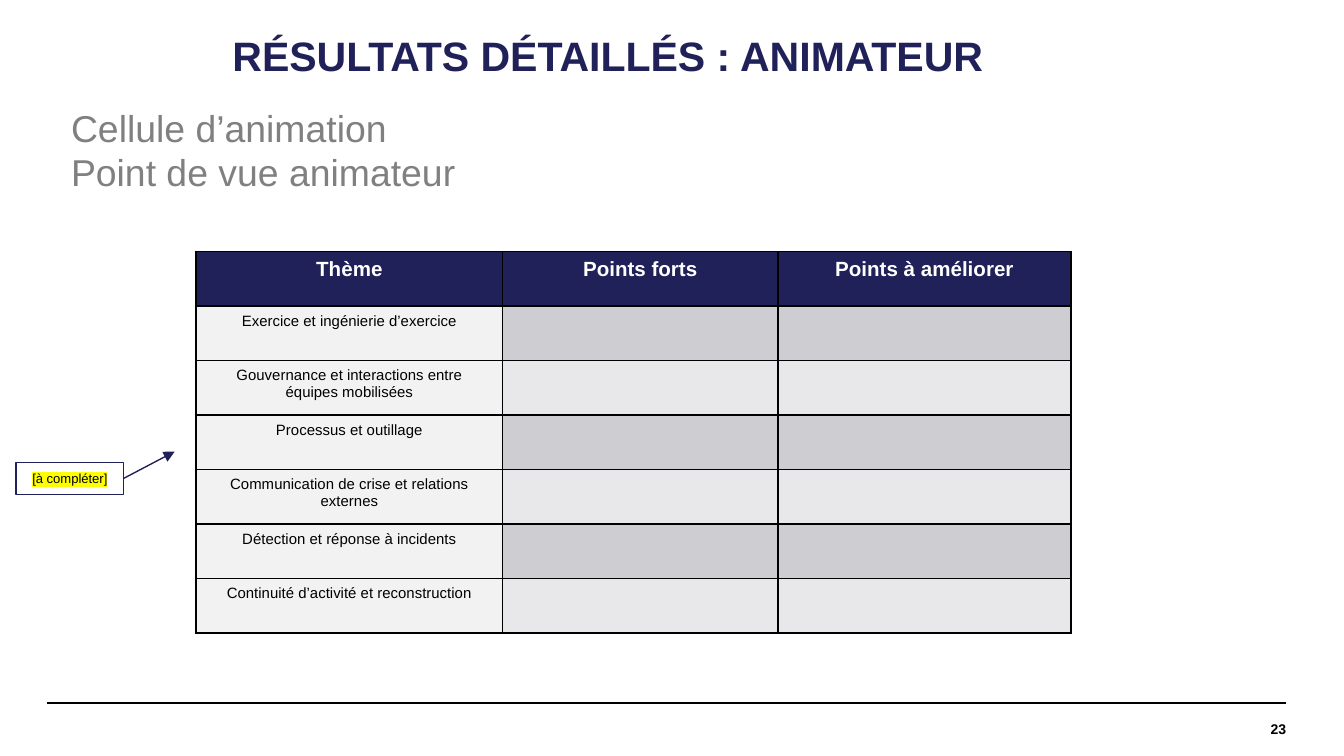
"""Build the detailed results slide for the exercise facilitator."""
from dataclasses import dataclass
from typing import Any, Optional

import lxml.etree
import pptx
import pptx.dml.color
import pptx.enum.shapes
import pptx.enum.text
import pptx.oxml.ns
import pptx.util

Inches = pptx.util.Inches
qn = pptx.oxml.ns.qn
ALIGN = pptx.enum.text.PP_ALIGN
ANCHOR = pptx.enum.text.MSO_ANCHOR


@dataclass(frozen=True)
class Theme:
    font: str = "Arial"
    navy: str = "21215A"
    black: str = "000000"
    white: str = "FFFFFF"
    grey: str = "808080"
    theme_fill: str = "F2F2F2"
    bands: tuple[str, str] = ("CDCDD2", "E8E8EA")
    highlight: str = "FFFF00"
    title_size: float = 22
    subtitle_size: float = 20
    header_size: float = 11
    body_size: float = 8
    number_size: float = 7.5
    note_size: float = 7
    thin_line: float = 0.75
    footer_line: float = 0.8
    border: float = 1


@dataclass(frozen=True)
class Style:
    size: float
    color: str
    bold: bool = False
    align: Optional[Any] = None


@dataclass(frozen=True)
class Label:
    text: str
    left: float
    top: float
    width: float
    height: float
    style: Style
    anchor: Any = ANCHOR.TOP
    padded: bool = True


THEME = Theme()
SLIDE_WIDTH = 10
SLIDE_HEIGHT = SLIDE_WIDTH * 9 / 16
TITLE = Label("RÉSULTATS DÉTAILLÉS : ANIMATEUR", 1.61, 0.1, 8.47, 0.67,
              Style(THEME.title_size, THEME.navy, True), ANCHOR.MIDDLE)
SUBTITLE = Label("Cellule d’animation\nPoint de vue animateur", 0.43, 0.73, 6.28, 0.77,
                 Style(THEME.subtitle_size, THEME.grey))
PAGE_NUMBER = Label("23", 8.09, 5.23, 1.48, 0.39,
                    Style(THEME.number_size, THEME.black, True, ALIGN.RIGHT), ANCHOR.MIDDLE, False)
HEADER_STYLE = Style(THEME.header_size, THEME.white, True, ALIGN.CENTER)
BODY_STYLE = Style(THEME.body_size, THEME.black, False, ALIGN.CENTER)
NOTE_STYLE = Style(THEME.note_size, THEME.black, False, ALIGN.CENTER)
HEADERS = ("Thème", "Points forts", "Points à améliorer")
COLUMN_WIDTHS = (2.28, 2.05, 2.18)
TABLE_HEIGHT = 2.84
TOPICS = (
    "Exercice et ingénierie d’exercice",
    "Gouvernance et interactions entre équipes mobilisées",
    "Processus et outillage",
    "Communication de crise et relations externes",
    "Détection et réponse à incidents",
    "Continuité d’activité et reconstruction",
)


def rgb(color: str) -> pptx.dml.color.RGBColor:
    return pptx.dml.color.RGBColor.from_string(color)


def write(frame: Any, text: str, style: Style) -> None:
    frame.text = text
    for paragraph in frame.paragraphs:
        if style.align is not None:
            paragraph.alignment = style.align
        for run in paragraph.runs:
            run.font.name = THEME.font
            run.font.size = pptx.util.Pt(style.size)
            run.font.bold = style.bold
            run.font.color.rgb = rgb(style.color)


def add_label(slide: Any, label: Label) -> Any:
    box = slide.shapes.add_textbox(Inches(label.left), Inches(label.top),
                                   Inches(label.width), Inches(label.height))
    frame = box.text_frame
    frame.word_wrap = True
    frame.vertical_anchor = label.anchor
    if not label.padded:
        frame.margin_left = frame.margin_right = frame.margin_top = frame.margin_bottom = 0
    write(frame, label.text, label.style)
    return box


def add_line(slide: Any, start: tuple[float, float], end: tuple[float, float],
             color: str, width: float) -> Any:
    line = slide.shapes.add_connector(pptx.enum.shapes.MSO_CONNECTOR.STRAIGHT,
                                      *map(Inches, start + end))
    line.line.color.rgb = rgb(color)
    line.line.width = pptx.util.Pt(width)
    lxml.etree.SubElement(line._element.spPr, qn("a:effectLst"))
    return line


def add_borders(cell: Any) -> None:
    properties = cell._tc.get_or_add_tcPr()
    for position, side in enumerate(("a:lnL", "a:lnR", "a:lnT", "a:lnB")):
        border = lxml.etree.Element(qn(side), w=str(pptx.util.Pt(THEME.border)))
        fill = lxml.etree.SubElement(border, qn("a:solidFill"))
        lxml.etree.SubElement(fill, qn("a:srgbClr"), val=THEME.black)
        properties.insert(position, border)


def fill_cell(cell: Any, text: str, style: Style, color: str) -> None:
    cell.fill.solid()
    cell.fill.fore_color.rgb = rgb(color)
    if text:
        write(cell.text_frame, text, style)
    add_borders(cell)


def add_results(slide: Any) -> None:
    row_count = len(TOPICS) + 1
    table = slide.shapes.add_table(row_count, len(HEADERS), Inches(1.46), Inches(1.87),
                                   Inches(sum(COLUMN_WIDTHS)), Inches(TABLE_HEIGHT)).table
    for column, width in zip(table.columns, COLUMN_WIDTHS):
        column.width = Inches(width)
    for row in table.rows:
        row.height = Inches(TABLE_HEIGHT / row_count)
    for column, header in enumerate(HEADERS):
        fill_cell(table.cell(0, column), header, HEADER_STYLE, THEME.navy)
    for index, topic in enumerate(TOPICS):
        fill_cell(table.cell(index + 1, 0), topic, BODY_STYLE, THEME.theme_fill)
        for column in range(1, len(HEADERS)):
            fill_cell(table.cell(index + 1, column), "", BODY_STYLE, THEME.bands[index % 2])


def add_note(slide: Any) -> None:
    note = slide.shapes.add_shape(pptx.enum.shapes.MSO_SHAPE.RECTANGLE, Inches(0.12),
                                  Inches(3.44), Inches(0.8), Inches(0.24))
    note.shadow.inherit = False
    note.fill.background()
    note.line.color.rgb = rgb(THEME.navy)
    note.line.width = pptx.util.Pt(THEME.thin_line)
    note.text_frame.word_wrap = True
    note.text_frame.vertical_anchor = ANCHOR.MIDDLE
    write(note.text_frame, "[à compléter]", NOTE_STYLE)
    text_fill = note._element.find(".//" + qn("a:rPr")).find(qn("a:solidFill"))
    highlight = lxml.etree.Element(qn("a:highlight"))
    lxml.etree.SubElement(highlight, qn("a:srgbClr"), val=THEME.highlight)
    text_fill.addnext(highlight)

    arrow = add_line(slide, (0.92, 3.56), (1.3, 3.36), THEME.navy, THEME.thin_line)
    arrow.begin_connect(note, 3)
    lxml.etree.SubElement(arrow.line._get_or_add_ln(), qn("a:tailEnd"), type="triangle")


def main() -> None:
    deck = pptx.Presentation()
    deck.slide_width, deck.slide_height = Inches(SLIDE_WIDTH), Inches(SLIDE_HEIGHT)
    slide = deck.slides.add_slide(deck.slide_layouts[6])
    add_line(slide, (0.35, 5.23), (9.57, 5.23), THEME.black, THEME.footer_line)
    add_label(slide, PAGE_NUMBER)
    title = add_label(slide, TITLE)
    title.text_frame.margin_left = Inches(0.12)
    title.text_frame.paragraphs[0].line_spacing = 0.9
    add_label(slide, SUBTITLE)
    add_note(slide)
    add_results(slide)
    deck.save("out.pptx")


if __name__ == "__main__":
    main()
